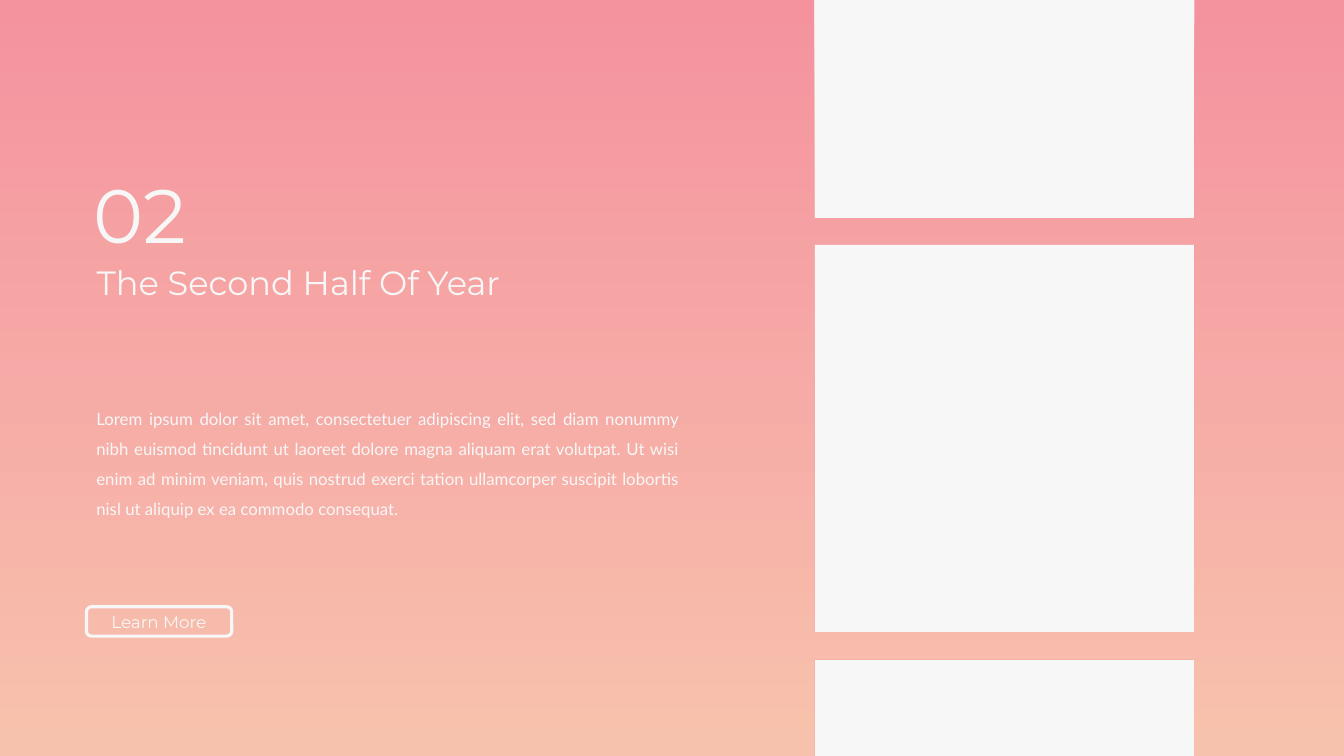
"""Build the section slide: a gradient panel with three cut-out windows beside the text."""
from lxml.etree import SubElement
from pptx import Presentation
from pptx.dml.color import RGBColor
from pptx.enum.shapes import MSO_SHAPE
from pptx.enum.text import MSO_ANCHOR, MSO_AUTO_SIZE, PP_ALIGN
from pptx.oxml.ns import qn
from pptx.util import Cm, Pt

THEME = {
    "light": RGBColor.from_string("F7F7F7"),
    "gradient": [RGBColor.from_string("F47181"), RGBColor.from_string("F8B195")],
    "alpha": "75000",
    "heading_font": "Montserrat",
    "body_font": "Lato",
    "number_size": Pt(54),
    "title_size": Pt(24),
    "text_size": Pt(12),
    "outline": Pt(2.25),
}


def place(shape, left, top, width, height):
    """Set a shape's bounds in centimetres."""
    bounds = {"left": left, "top": top, "width": width, "height": height}
    for key, value in bounds.items():
        setattr(shape, key, Cm(value))


def write(shape, text, size, font, align=PP_ALIGN.LEFT, line_spacing=1.0):
    """Fill a shape with one formatted paragraph."""
    frame = shape.text_frame
    frame.text = text
    paragraph = frame.paragraphs[0]
    formats = [
        (frame, {"word_wrap": True, "auto_size": MSO_AUTO_SIZE.SHAPE_TO_FIT_TEXT,
                 "vertical_anchor": MSO_ANCHOR.TOP}),
        (paragraph, {"alignment": align, "line_spacing": line_spacing}),
        (paragraph.runs[0].font, {"size": THEME[size], "name": THEME[font]}),
        (paragraph.runs[0].font.color, {"rgb": THEME["light"]}),
    ]
    for target, values in formats:
        for key, value in values.items():
            setattr(target, key, value)


deck = Presentation()
deck.slide_width, deck.slide_height = Cm(33.87), Cm(19.05)
slide = deck.slides.add_slide(deck.slide_layouts[5])
slide.background.fill.solid()
slide.background.fill.fore_color.rgb = THEME["light"]

left, right = 20.52, 30.1
outer_edge = [
    (0, 0), (left, 0), (left, 5.51), (right, 5.51), (right, 0), (33.87, 0),
    (33.87, 19.05), (right, 19.05), (right, 16.61), (left, 16.61), (left, 19.05), (0, 19.05),
]
middle_window = [(left, 6.15), (left, 15.93), (right, 15.93), (right, 6.15)]
outline = slide.shapes.build_freeform()
for contour in (outer_edge, middle_window):
    corners = [(Cm(x), Cm(y)) for x, y in contour]
    outline.move_to(*corners[0])
    outline.add_line_segments(corners[1:], close=True)
panel = outline.convert_to_shape()
panel.shadow.inherit = False
panel.line.fill.background()
panel.fill.gradient()
panel.fill.gradient_angle = 270
for stop, color in zip(panel.fill.gradient_stops, THEME["gradient"]):
    stop.color.rgb = color
for tint in panel.element.spPr.find(qn("a:gradFill")).iter(qn("a:srgbClr")):
    SubElement(tint, qn("a:alpha"), val=THEME["alpha"])

title = slide.shapes.title
title.element.addprevious(panel.element)
place(title, 2.18, 6.48, 12.37, 1.27)
write(title, "The Second Half Of Year", "title_size", "heading_font")

number = slide.shapes.add_textbox(0, 0, 0, 0)
place(number, 2.11, 4.11, 10.34, 2.57)
write(number, "02", "number_size", "heading_font")

summary = slide.shapes.add_textbox(0, 0, 0, 0)
place(summary, 2.18, 9.91, 15.19, 3.23)
write(
    summary,
    "Lorem ipsum dolor sit amet, consectetuer adipiscing elit, sed diam nonummy nibh euismod "
    "tincidunt ut laoreet dolore magna aliquam erat volutpat. Ut wisi enim ad minim veniam, "
    "quis nostrud exerci tation ullamcorper suscipit lobortis nisl ut aliquip ex ea commodo "
    "consequat.",
    "text_size", "body_font", PP_ALIGN.JUSTIFY, 1.5,
)

button = slide.shapes.add_group_shape()
border = button.shapes.add_shape(
    MSO_SHAPE.ROUNDED_RECTANGLE, Cm(2.18), Cm(15.29), Cm(3.66), Cm(0.74))
border.shadow.inherit = False
border.fill.background()
border.line.color.rgb = THEME["light"]
border.line.width = THEME["outline"]
label = button.shapes.add_textbox(Cm(2.39), Cm(15.29), Cm(3.23), Cm(0.76))
write(label, "Learn More", "text_size", "heading_font", PP_ALIGN.CENTER)

deck.save("out.pptx")
